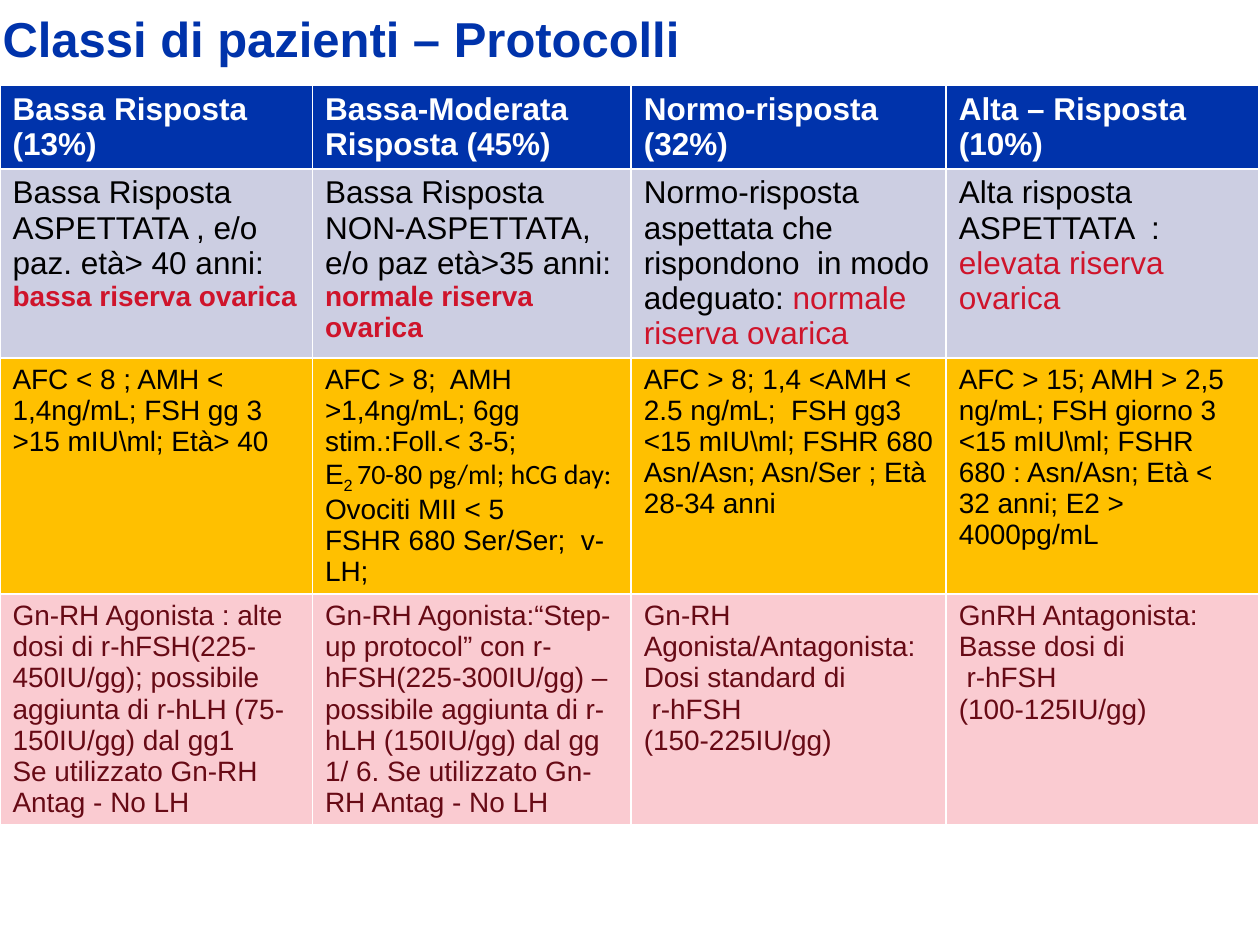
from pptx import Presentation
from pptx.dml.color import RGBColor
from pptx.enum.text import MSO_ANCHOR, MSO_AUTO_SIZE, PP_ALIGN
from pptx.util import Inches, Pt

BLUE = RGBColor(0x00, 0x33, 0xAB)
WHITE = RGBColor(0xFF, 0xFF, 0xFF)
BLACK = RGBColor(0x00, 0x00, 0x00)
RED = RGBColor(0xCF, 0x14, 0x2B)
MAROON = RGBColor(0x67, 0x0A, 0x15)
LAVENDER = RGBColor(0xCC, 0xCE, 0xE2)
AMBER = RGBColor(0xFF, 0xC0, 0x00)
PINK = RGBColor(0xFA, 0xCB, 0xD1)

PLAIN = {}
RED_TEXT = {"color": RED}
RED_BOLD = {"color": RED, "size": 16, "bold": True}
SUBSCRIPT = {"baseline": -25000}
CALIBRI = {"name": "Calibri"}


def format_font(font, name=None, size=None, color=None, bold=None):
    if name:
        font.name = name
    if size:
        font.size = Pt(size)
    if color is not None:
        font.color.rgb = color
    if bold is not None:
        font.bold = bold


def fill_cell(cell, paragraphs, fill, size, color, bold):
    cell.fill.solid()
    cell.fill.fore_color.rgb = fill
    frame = cell.text_frame
    for index, content in enumerate(paragraphs):
        paragraph = frame.paragraphs[0] if index == 0 else frame.add_paragraph()
        format_font(paragraph.font, "Arial", size, color, bold)
        if isinstance(content, str):
            paragraph.text = content
            continue
        for text, style in content:
            run = paragraph.add_run()
            run.text = text
            if "baseline" in style:
                run._r.get_or_add_rPr().set("baseline", str(style["baseline"]))
            else:
                format_font(run.font, **style)


classes = [
    ["Bassa Risposta (13%)"],
    ["Bassa-Moderata Risposta (45%)"],
    ["Normo-risposta", "(32%)"],
    ["Alta – Risposta", "(10%)"],
]
definitions = [
    ["Bassa Risposta ASPETTATA , e/o paz. età> 40 anni:",
     [("bassa riserva ovarica", RED_BOLD)]],
    [[("Bassa Risposta NON-ASPETTATA, e/o paz età>35 anni: ", PLAIN),
      ("normale riserva ovarica", RED_BOLD)]],
    [[("Normo-risposta aspettata che rispondono  in modo adeguato: ", PLAIN),
      ("normale riserva ovarica", RED_TEXT)]],
    [[("Alta risposta ASPETTATA  : ", PLAIN),
      ("elevata riserva ovarica", RED_TEXT)]],
]
markers = [
    ["AFC < 8 ; AMH <  1,4ng/mL; FSH gg 3 >15 mIU\\ml; Età> 40"],
    ["AFC > 8;  AMH >1,4ng/mL; 6gg stim.:Foll.< 3-5;",
     [("E", PLAIN), ("2 ", SUBSCRIPT),
      ("70-80 pg/ml; hCG day: ", CALIBRI), ("Ovociti MII < 5", PLAIN)],
     "FSHR 680 Ser/Ser;  v-LH;"],
    ["AFC > 8; 1,4 <AMH < 2.5 ng/mL;  FSH gg3 <15 mIU\\ml; "
     "FSHR 680 Asn/Asn; Asn/Ser ; Età 28-34 anni"],
    ["AFC > 15; AMH > 2,5 ng/mL; FSH giorno 3 <15 mIU\\ml; "
     "FSHR 680 : Asn/Asn; Età < 32 anni; E2 > 4000pg/mL"],
]
protocols = [
    ["Gn-RH Agonista : alte dosi di r-hFSH(225-450IU/gg); possibile  "
     "aggiunta di r-hLH (75-150IU/gg) dal gg1",
     "Se utilizzato Gn-RH Antag - No LH"],
    ["Gn-RH Agonista:“Step-up protocol” con r-hFSH(225-300IU/gg) – possibile "
     "aggiunta di r-hLH (150IU/gg) dal gg 1/ 6. Se utilizzato Gn-RH Antag - No LH"],
    ["Gn-RH Agonista/Antagonista:", "Dosi standard di", " r-hFSH\v(150-225IU/gg)"],
    ["GnRH Antagonista:", "Basse dosi di", " r-hFSH\v(100-125IU/gg)"],
]
table_rows = [
    (classes, 0.41, BLUE, 18, WHITE, True),
    (definitions, 0.41, LAVENDER, 18, BLACK, False),
    (markers, 1.47, AMBER, 16, BLACK, False),
    (protocols, 0.41, PINK, 16, MAROON, False),
]
column_widths = [2.48, 2.53, 2.5, 2.48]

prs = Presentation()
prs.slide_width, prs.slide_height = Inches(10), Inches(7.5)
slide = prs.slides.add_slide(prs.slide_layouts[0])
subtitle = slide.placeholders[1].element
subtitle.getparent().remove(subtitle)

title = slide.shapes.title
title.left, title.top = Inches(0.02), Inches(0.12)
title.width, title.height = Inches(8.5), Inches(1.11)
heading = title.text_frame
heading.margin_left = heading.margin_right = 0
heading.margin_top = heading.margin_bottom = 0
heading.vertical_anchor = MSO_ANCHOR.TOP
heading.auto_size = MSO_AUTO_SIZE.NONE
heading.text = "Classi di pazienti – Protocolli"
heading.paragraphs[0].alignment = PP_ALIGN.LEFT
heading.paragraphs[0].line_spacing = 0.9
format_font(heading.paragraphs[0].font, "Arial", 28, BLUE, True)

protocol_frame = slide.shapes.add_table(
    len(table_rows), len(column_widths), 0, Inches(0.68), Inches(10), Inches(6.23))
protocol_table = protocol_frame.table
protocol_table.horz_banding = False
for column, width in zip(protocol_table.columns, column_widths):
    column.width = Inches(width)
for row, (contents, height, *style) in zip(protocol_table.rows, table_rows):
    row.height = Inches(height)
    for cell, paragraphs in zip(row.cells, contents):
        fill_cell(cell, paragraphs, *style)
protocol_frame.height = Inches(6.23)

prs.save("out.pptx")
